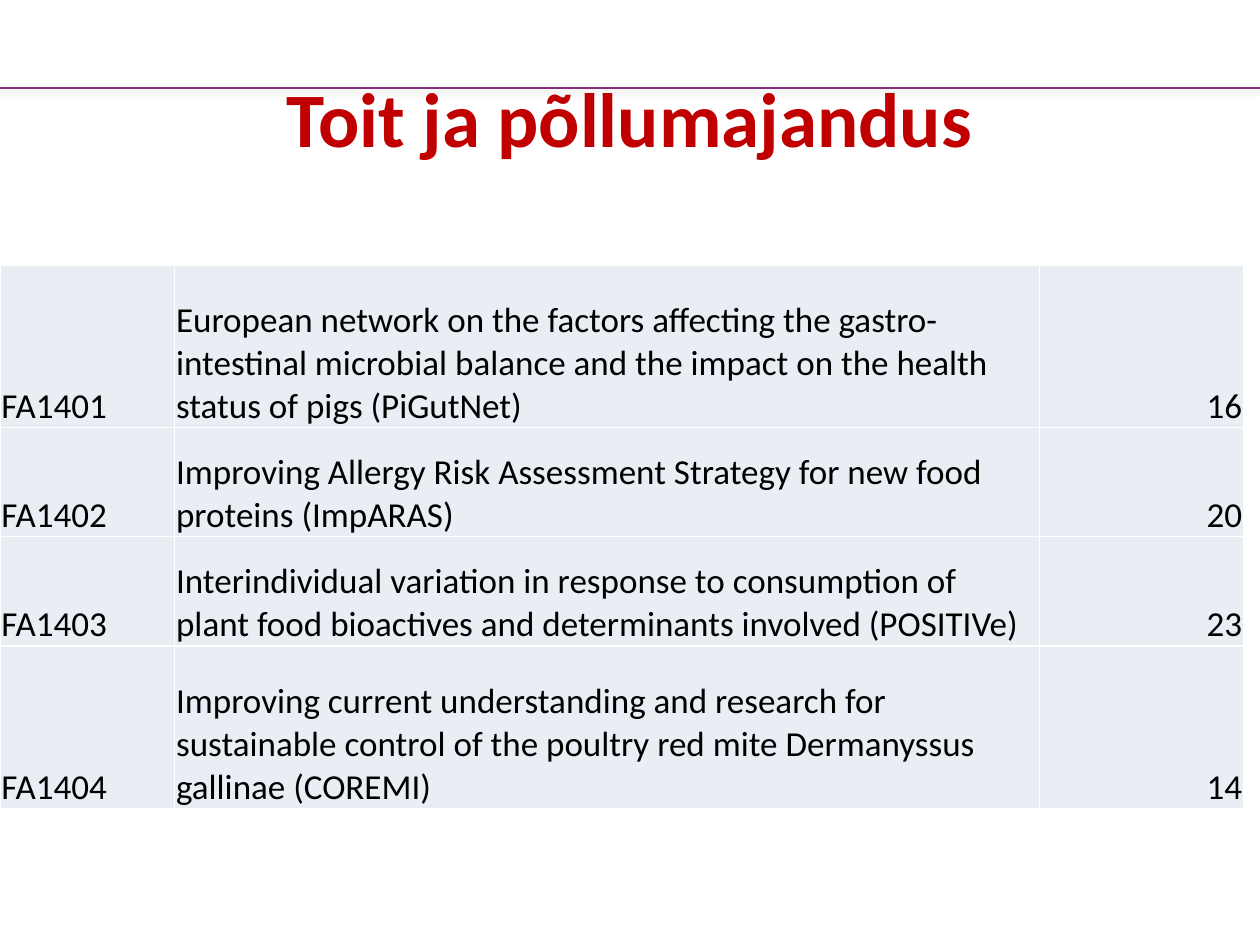
"""Build a slide with a table of food and agriculture actions."""
import lxml.etree
import pptx
import pptx.dml.color
import pptx.enum.shapes
import pptx.enum.text
import pptx.oxml
import pptx.util

Cm = pptx.util.Cm
Pt = pptx.util.Pt
align = pptx.enum.text.PP_ALIGN
anchor = pptx.enum.text.MSO_ANCHOR


def paint(code):
    return pptx.dml.color.RGBColor.from_string(code)


def style(para, size, code, side, bold=False):
    para.alignment = side
    para.font.name = "Calibri"
    para.font.size = Pt(size)
    para.font.bold = bold
    para.font.color.rgb = paint(code)


deck = pptx.Presentation()
deck.slide_width = Cm(25.4)
deck.slide_height = Cm(19.05)
slide = deck.slides.add_slide(deck.slide_layouts[5])

rule = slide.shapes.add_connector(
    pptx.enum.shapes.MSO_CONNECTOR.STRAIGHT, 0, Cm(1.78), Cm(25.4), Cm(1.78))
rule.line.color.rgb = paint("832B7C")
rule.line.width = Pt(1)
shade = pptx.oxml.parse_xml(
    '<a:effectLst xmlns:a="http://schemas.openxmlformats.org/drawingml/2006/main">'
    '<a:outerShdw blurRad="39370" dist="12700" dir="5400000" rotWithShape="0">'
    '<a:srgbClr val="808080"><a:alpha val="25000"/></a:srgbClr>'
    '</a:outerShdw></a:effectLst>')
rule._element.spPr.append(shade)

title = slide.shapes.title
title.left, title.top = Cm(1.27), Cm(0.76)
title.width, title.height = Cm(22.86), Cm(3.18)
title.text_frame.text = "Toit ja põllumajandus"
title.text_frame.vertical_anchor = anchor.MIDDLE
style(title.text_frame.paragraphs[0], 44, "C00000", align.CENTER, True)
title._element.addprevious(rule._element)

rows = [
    ("FA1401", "European network on the factors affecting the gastro-intestinal "
     "microbial balance and the impact on the health status of pigs (PiGutNet)", "16"),
    ("FA1402", "Improving Allergy Risk Assessment Strategy for new food proteins "
     "(ImpARAS)", "20"),
    ("FA1403", "Interindividual variation in response to consumption of plant food "
     "bioactives and determinants involved (POSITIVe)", "23"),
    ("FA1404", "Improving current understanding and research for sustainable control "
     "of the poultry red mite Dermanyssus gallinae (COREMI)", "14"),
]
widths = [3.52, 17.43, 4.12]
heights = [3.28, 2.2, 2.2, 3.28]
sides = [align.LEFT, align.LEFT, align.RIGHT]

table = slide.shapes.add_table(
    len(rows), len(widths), 0, Cm(5.34), Cm(sum(widths)), Cm(sum(heights))).table
table.first_row = False
table.horz_banding = False
for column, width in zip(table.columns, widths):
    column.width = Cm(width)
for row, height, texts in zip(table.rows, heights, rows):
    row.height = Cm(height)
    for cell, text, side in zip(row.cells, texts, sides):
        cell.text = text
        cell.vertical_anchor = anchor.BOTTOM
        cell.margin_left = cell.margin_right = cell.margin_top = Cm(0.03)
        cell.margin_bottom = 0
        cell.fill.solid()
        cell.fill.fore_color.rgb = paint("E9EDF4")
        style(cell.text_frame.paragraphs[0], 20, "000000", side)

deck.save("out.pptx")
